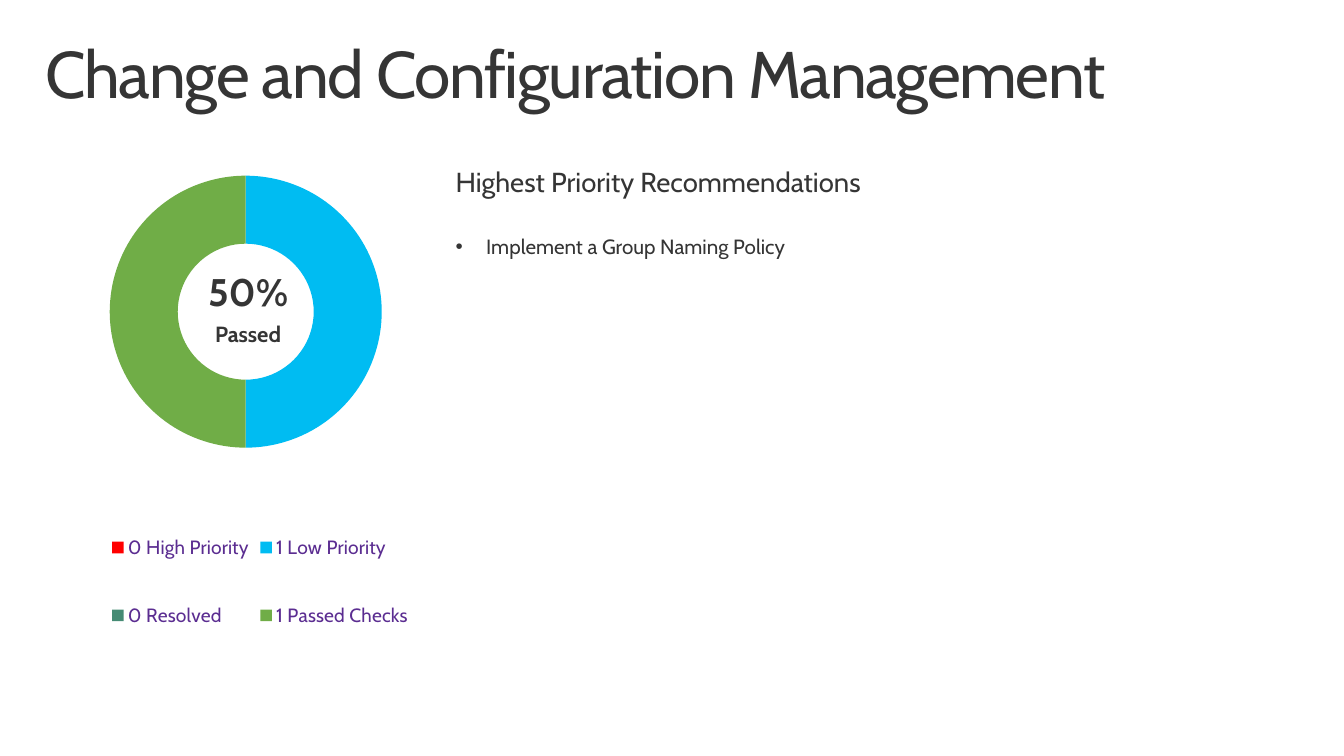
from lxml.etree import SubElement
from pptx import Presentation
from pptx.chart.data import CategoryChartData
from pptx.dml.color import RGBColor
from pptx.enum.chart import XL_CHART_TYPE, XL_LEGEND_POSITION
from pptx.enum.text import MSO_ANCHOR, PP_ALIGN
from pptx.oxml import parse_xml
from pptx.oxml.ns import nsdecls, qn
from pptx.util import Inches, Pt

FONT = "Cabin"
COLORS = {"text": "353535", "legend": "5B2D91"}

# Legend label, value, slice colour; the unnamed entries separate the legend items
CHECKS = [
    ("0 High Priority ", 0, "FF0000"),
    ("", None, "001D49"),
    ("1 Low Priority", 50, "00BCF2"),
    ("", None, "A3008F"),
    ("0 Resolved", 0, "458B74"),
    ("", None, "D1D1D1"),
    ("1 Passed Checks", 50, "70AD47"),
]
CHART_BOX = (0, 1.1, 4.83, 5.87)
PLOT_AREA = {"x": 0.23, "y": 0.07, "w": 0.57, "h": 0.56}
LEGEND_AREA = {"x": 0.22, "y": 0.66, "w": 0.65, "h": 0.31}
HOLE_SIZE = 68

# Each line: text, font format, paragraph format
BODY = {"line_spacing": 0.9, "space_after": Pt(6)}
CENTERED = {**BODY, "alignment": PP_ALIGN.CENTER}
TEXT_BOXES = [
    {"at": (0.3, 0.32, 13, 1), "insets": (0.16, 0.1), "lines": [
        ("Change and Configuration Management", {"size": Pt(48)}, {"line_spacing": 0.9}),
    ], "tracking": -100},
    {"at": (1.8, 2.61, 1.42, 3.19), "insets": (0.2, 0.16), "lines": [
        ("50%", {"size": Pt(28), "bold": True}, CENTERED),
        ("Passed", {"size": Pt(16), "bold": True}, CENTERED),
    ]},
    {"at": (4.41, 1.55, 8.41, 1.25), "insets": (0.2, 0.16), "lines": [
        ("Highest Priority Recommendations", {"size": Pt(20)}, BODY),
        ("Implement a Group Naming Policy", {"size": Pt(15)},
         {**BODY, "space_before": Pt(22)}),
    ], "bulleted": [1]},
]


def apply_format(target, values):
    for name, value in values.items():
        setattr(target, name, value)


def style_font(font, color, values):
    apply_format(font, {"name": FONT, **values})
    font.color.rgb = RGBColor.from_string(COLORS[color])


def add_bullet(para):
    properties = para._p.get_or_add_pPr()
    properties.set("marL", str(Inches(0.31)))
    properties.set("indent", str(-Inches(0.31)))
    SubElement(properties, qn("a:buFont")).set("typeface", "Arial")
    SubElement(properties, qn("a:buChar")).set("char", "•")


def add_text(page, content):
    box = page.shapes.add_textbox(*map(Inches, content["at"]))
    frame = box.text_frame
    side, top = map(Inches, content["insets"])
    apply_format(frame, {
        "word_wrap": True, "vertical_anchor": MSO_ANCHOR.TOP,
        "margin_left": side, "margin_right": side,
        "margin_top": top, "margin_bottom": top,
    })
    for index, (text, font_format, para_format) in enumerate(content["lines"]):
        para = frame.add_paragraph() if index else frame.paragraphs[0]
        apply_format(para, para_format)
        if index in content.get("bulleted", []):
            add_bullet(para)
        span = para.add_run()
        span.text = text
        style_font(span.font, "text", font_format)
        if "tracking" in content:
            span._r.get_or_add_rPr().set("spc", str(content["tracking"]))


def make_layout(area, inner=False):
    """Build a manual chart layout from fractions of the chart's size."""
    target = '<c:layoutTarget val="inner"/>' if inner else ""
    modes = "".join(f'<c:{side}Mode val="edge"/>' for side in "xy")
    sizes = "".join(f'<c:{side} val="{value}"/>' for side, value in area.items())
    return parse_xml(f'<c:layout {nsdecls("c")}><c:manualLayout>'
                     f"{target}{modes}{sizes}</c:manualLayout></c:layout>")


def remove_layout(element):
    for layout in element.findall(qn("c:layout")):
        element.remove(layout)


def add_checks_chart(page):
    data = CategoryChartData()
    data.categories = [label for label, value, color in CHECKS]
    data.add_series("Series 1", [value for label, value, color in CHECKS])
    chart = page.shapes.add_chart(
        XL_CHART_TYPE.DOUGHNUT, *map(Inches, CHART_BOX), data).chart
    chart.has_title = False
    style_font(chart.font, "text", {"size": Pt(10)})

    plot = chart.plots[0]
    plot.vary_by_categories = True
    plot._element.find(qn("c:holeSize")).set("val", str(HOLE_SIZE))
    for index, (label, value, color) in enumerate(CHECKS):
        point = plot.series[0].points[index].format
        point.fill.solid()
        point.fill.fore_color.rgb = RGBColor.from_string(color)
        point.line.fill.background()
    plot_area = plot._element.getparent()
    remove_layout(plot_area)
    plot_area.insert(0, make_layout(PLOT_AREA, inner=True))

    chart.has_legend = True
    legend = chart.legend
    legend.position = XL_LEGEND_POSITION.BOTTOM
    legend.include_in_layout = False
    style_font(legend.font, "legend", {"size": Pt(14)})
    remove_layout(legend._element)
    hidden = [
        parse_xml(f'<c:legendEntry {nsdecls("c")}><c:idx val="{index}"/>'
                  '<c:delete val="1"/></c:legendEntry>')
        for index, (label, value, color) in enumerate(CHECKS) if not label
    ]
    previous = legend._element.find(qn("c:legendPos"))
    for element in [*hidden, make_layout(LEGEND_AREA)]:
        previous.addnext(element)
        previous = element


def main():
    deck = Presentation()
    deck.slide_width, deck.slide_height = Inches(13.6), Inches(7.65)
    page = deck.slides.add_slide(deck.slide_layouts[6])
    title, *texts = TEXT_BOXES
    add_text(page, title)
    add_checks_chart(page)
    for content in texts:
        add_text(page, content)
    deck.save("out.pptx")


if __name__ == "__main__":
    main()
